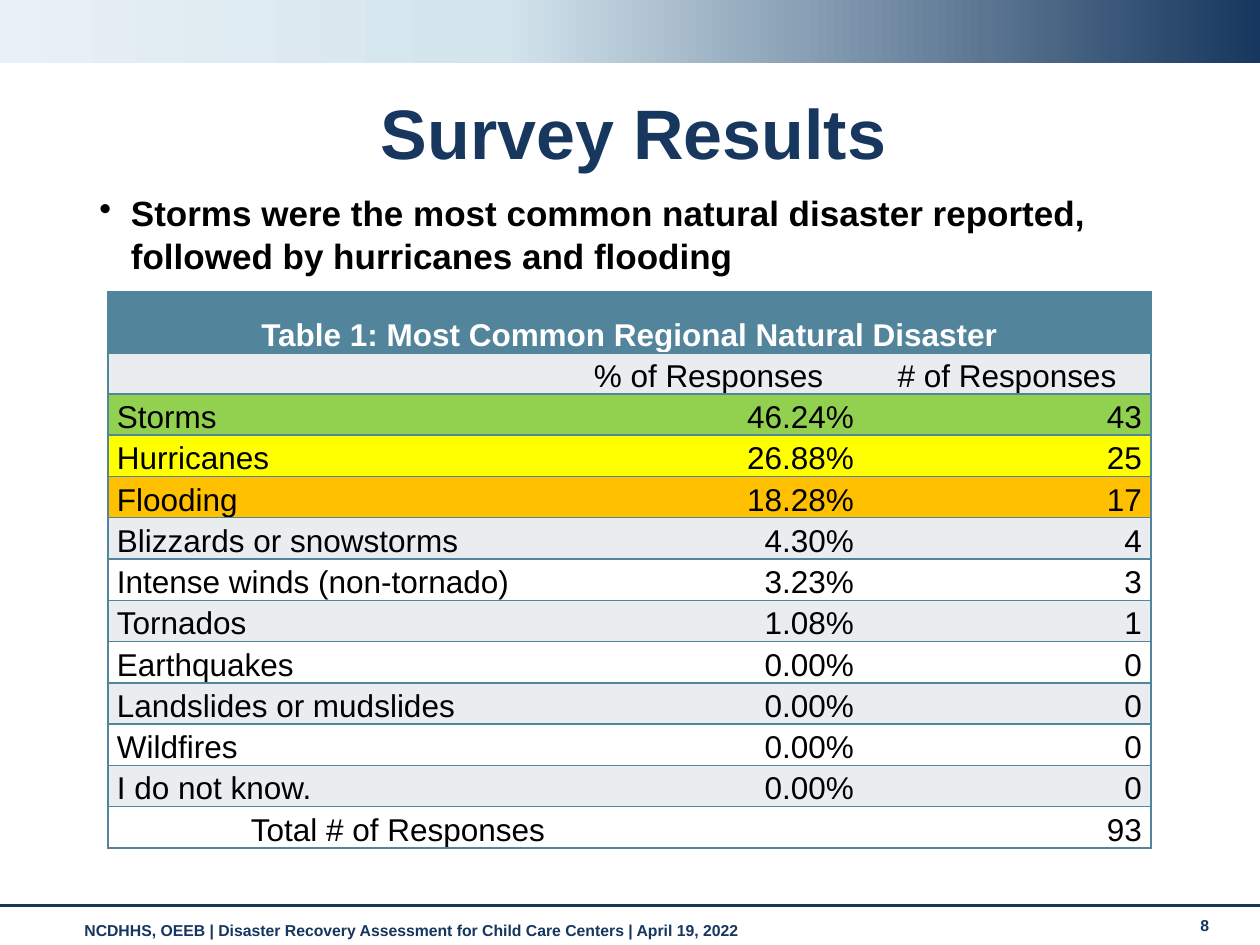
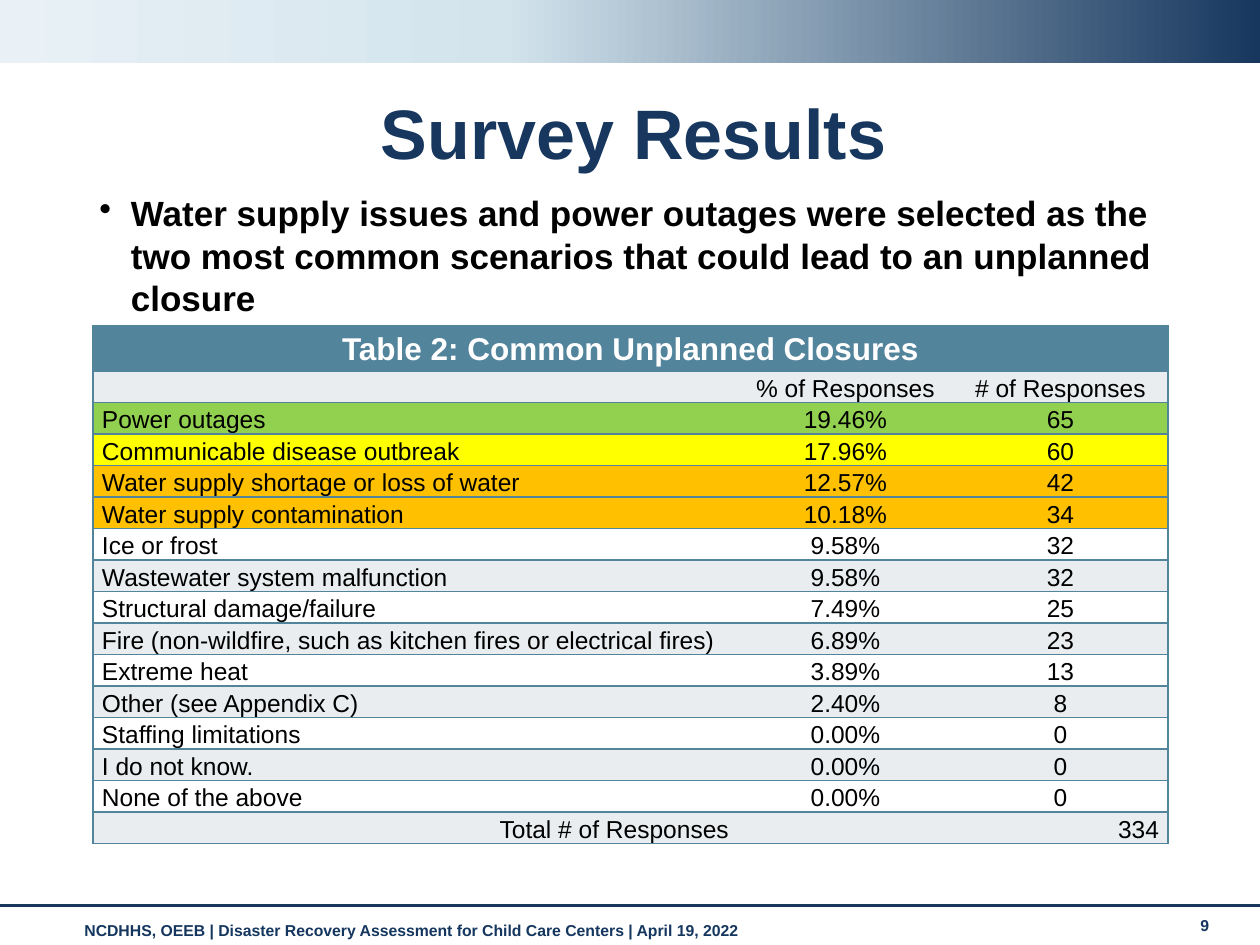
from copy import deepcopy

from lxml.etree import SubElement
from pptx import Presentation
from pptx.dml.color import RGBColor
from pptx.enum.shapes import MSO_CONNECTOR, MSO_SHAPE
from pptx.enum.text import MSO_ANCHOR, PP_ALIGN
from pptx.oxml import parse_xml
from pptx.oxml.ns import nsdecls, qn
from pptx.util import Pt

EMU_PER_PX = 914400 / 126
FONT = "Arial"
COLORS = {
    "navy": "17375E", "footer": "15365E", "sky": "D3E4ED", "mist": "E9F1F6",
    "teal": "52849C", "grey": "E9EDEF", "white": "FFFFFF", "black": "000000",
    "green": "92D050", "yellow": "FFFF00", "orange": "FFC000",
}
FOOTER = "NCDHHS, OEEB | Disaster Recovery Assessment for Child Care Centers | April 19, 2022"
HEADINGS = ("", "% of Responses", "# of Responses")
NO_TABLE_STYLE = "{2D5ABB26-0587-4C30-8999-92F81FD0307C}"

SLIDES = [
    {
        "number": "8",
        "message": "Storms were the most common natural disaster reported, "
                   "followed by hurricanes and flooding",
        "caption": "Table 1: Most Common Regional Natural Disaster",
        "caption_anchor": MSO_ANCHOR.BOTTOM,
        "at": (108, 292, 1043, 556),
        "cols": (446, 309, 288),
        "head_rows": (61, 41),
        "size": 18,
        "value_align": PP_ALIGN.RIGHT,
        "highlights": ("green", "yellow", "orange"),
        "rows": [
            ("Storms", "46.24%", "43"),
            ("Hurricanes", "26.88%", "25"),
            ("Flooding", "18.28%", "17"),
            ("Blizzards or snowstorms", "4.30%", "4"),
            ("Intense winds (non-tornado)", "3.23%", "3"),
            ("Tornados", "1.08%", "1"),
            ("Earthquakes", "0.00%", "0"),
            ("Landslides or mudslides", "0.00%", "0"),
            ("Wildfires", "0.00%", "0"),
            ("I do not know.", "0.00%", "0"),
        ],
        "total": "93",
    },
    {
        "number": "9",
        "message": "Water supply issues and power outages were selected as the two most "
                   "common scenarios that could lead to an unplanned closure",
        "caption": "Table 2: Common Unplanned Closures",
        "caption_anchor": MSO_ANCHOR.MIDDLE,
        "at": (93, 326, 1075, 516),
        "cols": (645, 215, 215),
        "head_rows": (45, 30),
        "size": 14,
        "value_align": PP_ALIGN.CENTER,
        "highlights": ("green", "yellow", "orange", "orange"),
        "rows": [
            ("Power outages", "19.46%", "65"),
            ("Communicable disease outbreak", "17.96%", "60"),
            ("Water supply shortage or loss of water", "12.57%", "42"),
            ("Water supply contamination", "10.18%", "34"),
            ("Ice or frost", "9.58%", "32"),
            ("Wastewater system malfunction", "9.58%", "32"),
            ("Structural damage/failure", "7.49%", "25"),
            ("Fire (non-wildfire, such as kitchen fires or electrical fires)", "6.89%", "23"),
            ("Extreme heat", "3.89%", "13"),
            ("Other (see Appendix C)", "2.40%", "8"),
            ("Staffing limitations", "0.00%", "0"),
            ("I do not know.", "0.00%", "0"),
            ("None of the above", "0.00%", "0"),
        ],
        "total": "334",
    },
]


def px(*values):
    """Turn px lengths into a list of EMU."""
    return [round(v * EMU_PER_PX) for v in values]


def write(tf, text, size, color, bold=True, align=PP_ALIGN.LEFT):
    tf.word_wrap = True
    p = tf.paragraphs[0]
    p.alignment = align
    p.font.name = FONT
    p.font.size = Pt(size)
    p.font.bold = bold
    p.font.color.rgb = RGBColor.from_string(COLORS[color])
    if text:
        p.add_run().text = text
    else:
        SubElement(p._p, qn("a:endParaRPr"), sz=str(size * 100))
    return p


prs = Presentation()
prs.slide_width, prs.slide_height = px(1260, 945)

for page in SLIDES:
    s = prs.slides.add_slide(prs.slide_layouts[6])

    # Footer, page number, top band and rule
    for text, box in ((FOOTER, (72, 915, 1101, 36)), (page["number"], (1188, 910, 56, 38))):
        write(s.shapes.add_textbox(*px(*box)).text_frame, text, 9, "footer")

    band = s.shapes.add_shape(MSO_SHAPE.RECTANGLE, *px(0, 0, 1260, 63))
    band.shadow.inherit = False
    band.line.fill.background()
    band.fill.gradient()
    band.fill.gradient_angle = 180
    stops = band._element.spPr.find(qn("a:gradFill")).find(qn("a:gsLst"))
    stops.append(deepcopy(stops[-1]))
    for stop, position, color in zip(band.fill.gradient_stops, (0, 0.6, 1),
                                     ("navy", "sky", "mist")):
        stop.position = position
        stop.color.rgb = RGBColor.from_string(COLORS[color])

    rule = s.shapes.add_connector(MSO_CONNECTOR.STRAIGHT, *px(0, 906, 1260, 906))
    rule.line.color.rgb = RGBColor.from_string(COLORS["navy"])
    rule.line.width = Pt(1.75)
    SubElement(rule._element.spPr, qn("a:effectLst"))

    # Title and bulleted message
    tf = s.shapes.add_textbox(*px(93, 86, 1081, 76)).text_frame
    tf.margin_top, tf.margin_bottom = px(4, 0)
    write(tf, "Survey Results", 40, "navy", align=PP_ALIGN.CENTER)

    tf = s.shapes.add_textbox(*px(87, 184, 1087, 168)).text_frame
    tf.margin_top = px(8)[0]
    p = write(tf, page["message"], 20, "black")
    p.line_spacing = Pt(24)
    pPr = p._p.get_or_add_pPr()
    pPr.set("marL", "228600")
    pPr.set("indent", "-228600")
    pPr.find(qn("a:defRPr")).addprevious(
        parse_xml(f'<a:buChar {nsdecls("a")} char="•"/>'))

    # Table: caption, headings, answers, total
    rows = [(page["caption"], "", ""), HEADINGS, *page["rows"],
            ("Total # of Responses", page["total"], "")]
    last = len(rows) - 1
    table = s.shapes.add_table(len(rows), 3, *px(*page["at"])).table
    table._tbl.tblPr.find(qn("a:tableStyleId")).text = NO_TABLE_STYLE
    for column, width in zip(table.columns, px(*page["cols"])):
        column.width = width
    head_heights = px(*page["head_rows"])
    body_height = (px(page["at"][3])[0] - sum(head_heights)) // (last - 1)
    for row, height in zip(table.rows, head_heights + [body_height] * (last - 1)):
        row.height = height
    table.cell(0, 0).merge(table.cell(0, 2))
    table.cell(last, 1).merge(table.cell(last, 2))

    fills = ["teal", "grey", *page["highlights"]]
    fills += ["grey" if i % 2 else "white" for i in range(len(fills), len(rows))]
    for i, row in enumerate(rows):
        for j, text in enumerate(row):
            cell = table.cell(i, j)
            cell.margin_left = cell.margin_right = px(9)[0]
            cell.margin_top = cell.margin_bottom = 0
            cell.vertical_anchor = page["caption_anchor"] if i == 0 else MSO_ANCHOR.BOTTOM
            if i < 2:
                align = PP_ALIGN.CENTER
            elif i == last:
                align = PP_ALIGN.RIGHT
            else:
                align = page["value_align"] if j else PP_ALIGN.LEFT
            p = write(cell.text_frame, text, 18 if i == 0 else page["size"],
                      "white" if i == 0 else "black", i == 0, align)
            p.line_spacing = 1.07

            sides = ["lnT", "lnB"]
            if j + cell.span_width == 3 or j == 2:
                sides.insert(0, "lnR")
            if j == 0:
                sides.insert(0, "lnL")
            tcPr = cell._tc.get_or_add_tcPr()
            for side in sides:
                tcPr.append(parse_xml(
                    f'<a:{side} {nsdecls("a")} w="12700"><a:solidFill>'
                    f'<a:srgbClr val="{COLORS["teal"]}"/></a:solidFill></a:{side}>'))
            cell.fill.solid()
            cell.fill.fore_color.rgb = RGBColor.from_string(COLORS[fills[i]])

prs.save("out.pptx")
